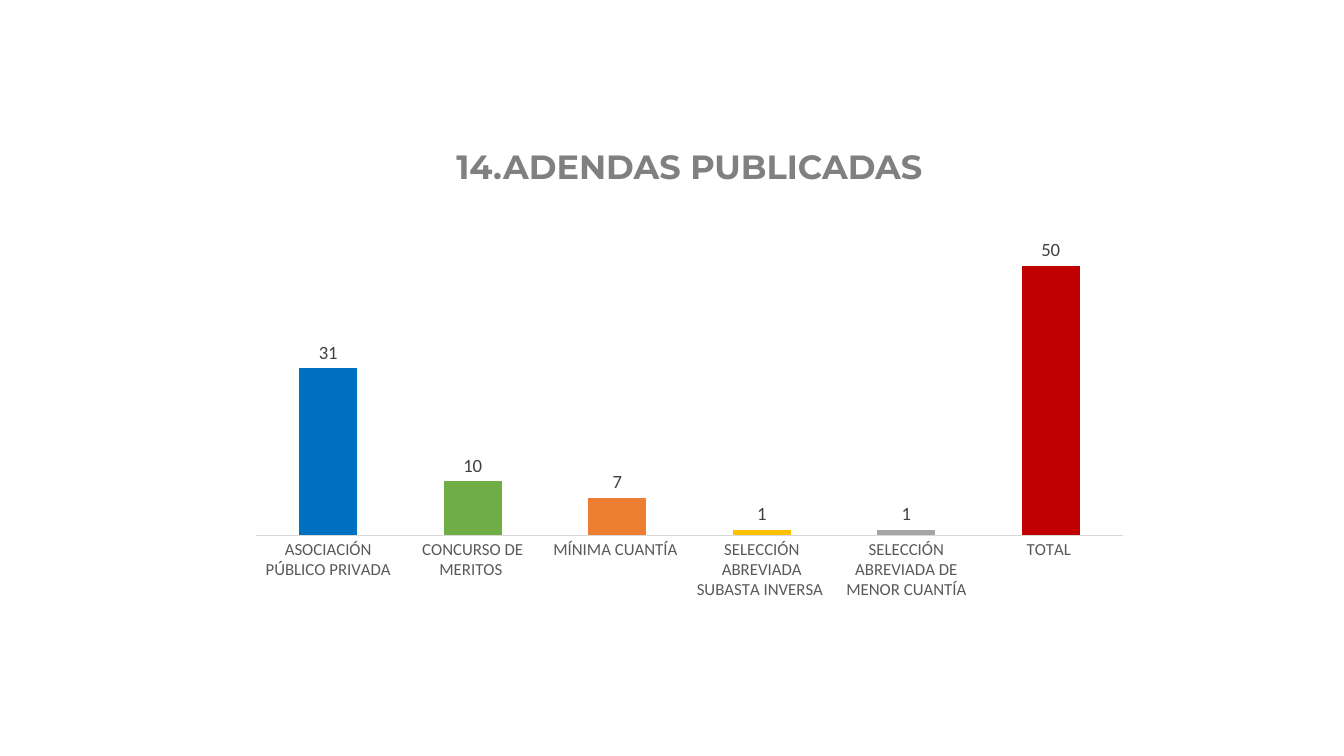
from pptx import Presentation
from pptx.chart.data import CategoryChartData
from pptx.dml.color import RGBColor
from pptx.enum.chart import XL_CHART_TYPE, XL_LABEL_POSITION, XL_TICK_MARK
from pptx.enum.text import MSO_ANCHOR, PP_ALIGN
from pptx.util import Inches, Pt

COLUMNS = XL_CHART_TYPE.COLUMN_CLUSTERED
OUTSIDE = XL_LABEL_POSITION.OUTSIDE_END
NO_TICK = XL_TICK_MARK.NONE
MIDDLE = MSO_ANCHOR.MIDDLE
CENTER = PP_ALIGN.CENTER

WIDTH = 10
HEIGHT = WIDTH * 9 / 16
TITLE = "14.ADENDAS PUBLICADAS"
ADDENDA = [
    ("ASOCIACIÓN PÚBLICO PRIVADA", 31, "0070C0"),
    ("CONCURSO DE MERITOS ", 10, "70AD47"),
    ("MÍNIMA CUANTÍA ", 7, "ED7D31"),
    ("SELECCIÓN ABREVIADA SUBASTA INVERSA ", 1, "FFC000"),
    ("SELECCIÓN ABREVIADA DE MENOR CUANTÍA", 1, "A5A5A5"),
    ("TOTAL ", 50, "C00000"),
]


def color(value):
    """Return the colour for a hex string."""
    return RGBColor.from_string(value)


def style(font, size, hex_color, name="Calibri", bold=False):
    """Set the size, colour, family and weight of a font."""
    font.size = Pt(size)
    font.color.rgb = color(hex_color)
    font.name = name
    font.bold = bold


def add_text(page, text, area, **format):
    """Add a centred line of text in the given area."""
    box = page.shapes.add_textbox(*map(Inches, area))
    frame = box.text_frame
    frame.word_wrap = False
    frame.vertical_anchor = MIDDLE
    para = frame.paragraphs[0]
    para.alignment = CENTER
    para.line_spacing = 0.9
    span = para.add_run()
    span.text = text
    style(span.font, **format)


def add_columns(page, rows, area):
    """Add a column chart with one colour per category."""
    names, values, fills = zip(*rows)
    data = CategoryChartData()
    data.categories = names
    data.add_series("Series 1", values)
    chart = page.shapes.add_chart(COLUMNS, *map(Inches, area), data).chart
    chart.has_legend = False
    chart.has_title = False
    style(chart.font, 10, "000000")

    axis = chart.category_axis
    axis.major_tick_mark = axis.minor_tick_mark = NO_TICK
    axis.format.line.color.rgb = color("D9D9D9")
    axis.format.line.width = Pt(0.75)
    style(axis.tick_labels.font, 9, "595959")

    scale = chart.value_axis
    scale.minimum_scale, scale.maximum_scale = 0, 60
    scale.has_major_gridlines = False
    scale.visible = False

    plot = chart.plots[0]
    plot.gap_width, plot.overlap = 150, -25
    plot.vary_by_categories = False
    plot.has_data_labels = True
    labels = plot.data_labels
    labels.show_value = True
    labels.position = OUTSIDE
    style(labels.font, 10, "404040")

    series = plot.series[0]
    series.format.fill.solid()
    series.format.fill.fore_color.rgb = color(fills[0])
    for index, hex_color in enumerate(fills[1:], start=1):
        fill = series.points[index].format.fill
        fill.solid()
        fill.fore_color.rgb = color(hex_color)


def main():
    """Build the slide and save the deck."""
    deck = Presentation()
    deck.slide_width, deck.slide_height = Inches(WIDTH), Inches(HEIGHT)
    page = deck.slides.add_slide(deck.slide_layouts[6])
    add_columns(page, ADDENDA, (1.77, 1.52, 6.72, 3))
    add_text(page, TITLE, (3.28, 1.07, 3.7, 0.37),
             size=18, hex_color="808080", name="Montserrat", bold=True)
    deck.save("out.pptx")


if __name__ == "__main__":
    main()
